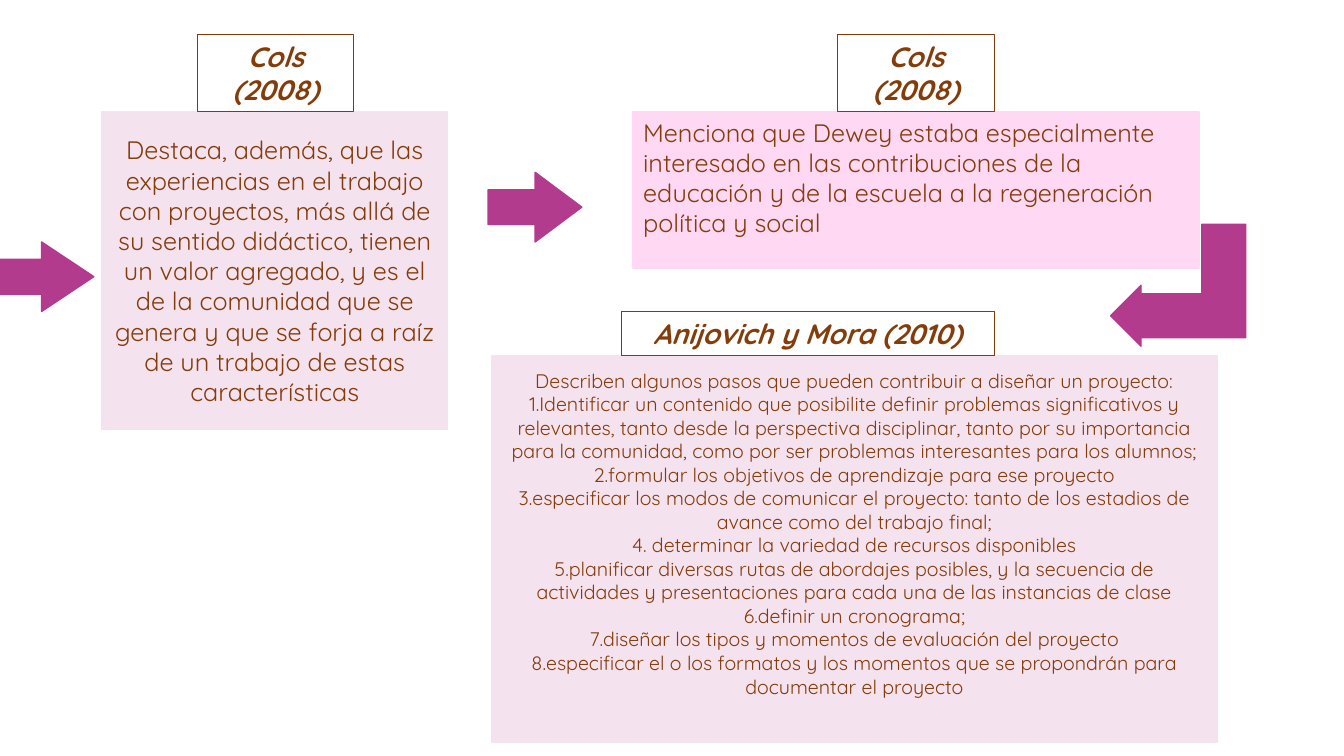
from pptx import Presentation
from pptx.dml.color import RGBColor
from pptx.enum.shapes import MSO_SHAPE
from pptx.enum.text import MSO_ANCHOR, MSO_AUTO_SIZE, PP_ALIGN
from pptx.util import Inches, Pt

COLORS = {"brown": "843C0B", "lilac": "F5E2EF", "pink": "FFD8F3", "magenta": "B23B8D"}
FONT = "Quicksand"
WIDTH, HEIGHT = Inches(13.33), Inches(7.5)

COMMUNITY = [
    "Destaca, además, que las experiencias en el trabajo con proyectos, más allá de su "
    "sentido didáctico, tienen un valor agregado, y es el de la comunidad que se genera "
    "y que se forja a raíz de un trabajo de estas características",
]
DEWEY = [
    "Menciona que Dewey estaba especialmente interesado en las contribuciones de la "
    "educación y de la escuela a la regeneración política y social",
]
STEPS = [
    "Describen algunos pasos que pueden contribuir a diseñar un proyecto:",
    "1.Identificar un contenido que posibilite definir problemas significativos y "
    "relevantes, tanto desde la perspectiva disciplinar, tanto por su importancia para la "
    "comunidad, como por ser problemas interesantes para los alumnos;",
    "2.formular los objetivos de aprendizaje para ese proyecto",
    "3.especificar los modos de comunicar el proyecto: tanto de los estadios de avance "
    "como del trabajo final;",
    "4. determinar la variedad de recursos disponibles",
    "5.planificar diversas rutas de abordajes posibles, y la secuencia de actividades y "
    "presentaciones para cada una de las instancias de clase",
    "6.definir un cronograma;",
    "7.diseñar los tipos y momentos de evaluación del proyecto",
    "8.especificar el o los formatos y los momentos que se propondrán para documentar "
    "el proyecto",
]

# Percent of slide width and height: left, top, width, height
CARDS = [
    {"author": "Cols (2008)", "label": (14.7, 11.63, 10.27), "body": COMMUNITY,
     "area": (7.58, 14.8, 25.73, 42), "fill": "lilac", "size": 18,
     "align": PP_ALIGN.CENTER, "bottom": 0.05},
    {"author": "Cols (2008)", "label": (62.34, 11.63, 10.27), "body": DEWEY,
     "area": (47.11, 14.8, 42.09, 20.67), "fill": "pink", "size": 18,
     "align": PP_ALIGN.LEFT, "bottom": 0.3},
    {"author": "Anijovich y Mora (2010)", "label": (46.21, 27.76, 5.87), "body": STEPS,
     "area": (36.61, 47.07, 53.94, 51.07), "fill": "lilac", "size": 14,
     "align": PP_ALIGN.CENTER, "bottom": 0.36},
]
ARROWS = [
    (MSO_SHAPE.RIGHT_ARROW, (0, 32, 6.98, 9.2), (0.5, 0.75)),
    (MSO_SHAPE.RIGHT_ARROW, (36.31, 22.8, 6.98, 9.2), (0.5, 0.67)),
    (MSO_SHAPE.BENT_UP_ARROW, (83.12, 28.8, 9.08, 17.87), (0.36, 0.25, 0.25)),
]


def color(name):
    return RGBColor.from_string(COLORS[name])


def add_block(slide, kind, area, fill=None, line="brown", weight=1):
    left, top, width, height = area
    block = slide.shapes.add_shape(
        kind, int(WIDTH * left / 100), int(HEIGHT * top / 100),
        int(WIDTH * width / 100), int(HEIGHT * height / 100))
    block.shadow.inherit = False
    if fill:
        block.fill.solid()
        block.fill.fore_color.rgb = color(fill)
    else:
        block.fill.background()
    block.line.color.rgb = color(line)
    block.line.width = Pt(weight)
    return block


def write(block, paragraphs, size=18, strong=False, align=PP_ALIGN.CENTER,
          anchor=MSO_ANCHOR.MIDDLE, bottom=0.05):
    frame = block.text_frame
    frame.word_wrap = True
    frame.vertical_anchor = anchor
    frame.margin_bottom = Inches(bottom)
    for index, text in enumerate(paragraphs):
        paragraph = frame.add_paragraph() if index else frame.paragraphs[0]
        paragraph.alignment = align
        run = paragraph.add_run()
        run.text = text
        run.font.name = FONT
        run.font.size = Pt(size)
        run.font.bold = run.font.italic = strong
        run.font.color.rgb = color("brown")
    return frame


def main():
    deck = Presentation()
    deck.slide_width, deck.slide_height = WIDTH, HEIGHT
    slide = deck.slides.add_slide(deck.slide_layouts[6])

    for card in CARDS:
        body = add_block(slide, MSO_SHAPE.RECTANGLE, card["area"], card["fill"], card["fill"])
        write(body, card["body"], size=card["size"], align=card["align"], bottom=card["bottom"])
        left, width, height = card["label"]
        label_area = (left, card["area"][1] - height, width, height)
        label = add_block(slide, MSO_SHAPE.RECTANGLE, label_area, weight=0.75)
        frame = write(label, [card["author"]], size=20, strong=True, anchor=MSO_ANCHOR.TOP)
        frame.auto_size = MSO_AUTO_SIZE.SHAPE_TO_FIT_TEXT

    for kind, area, adjustments in ARROWS:
        arrow = add_block(slide, kind, area, "magenta", "magenta")
        for index, value in enumerate(adjustments):
            arrow.adjustments[index] = value
        if kind == MSO_SHAPE.BENT_UP_ARROW:
            arrow.rotation = 270
            arrow.element.spPr.xfrm.set("flipH", "1")

    deck.save("out.pptx")


if __name__ == "__main__":
    main()
